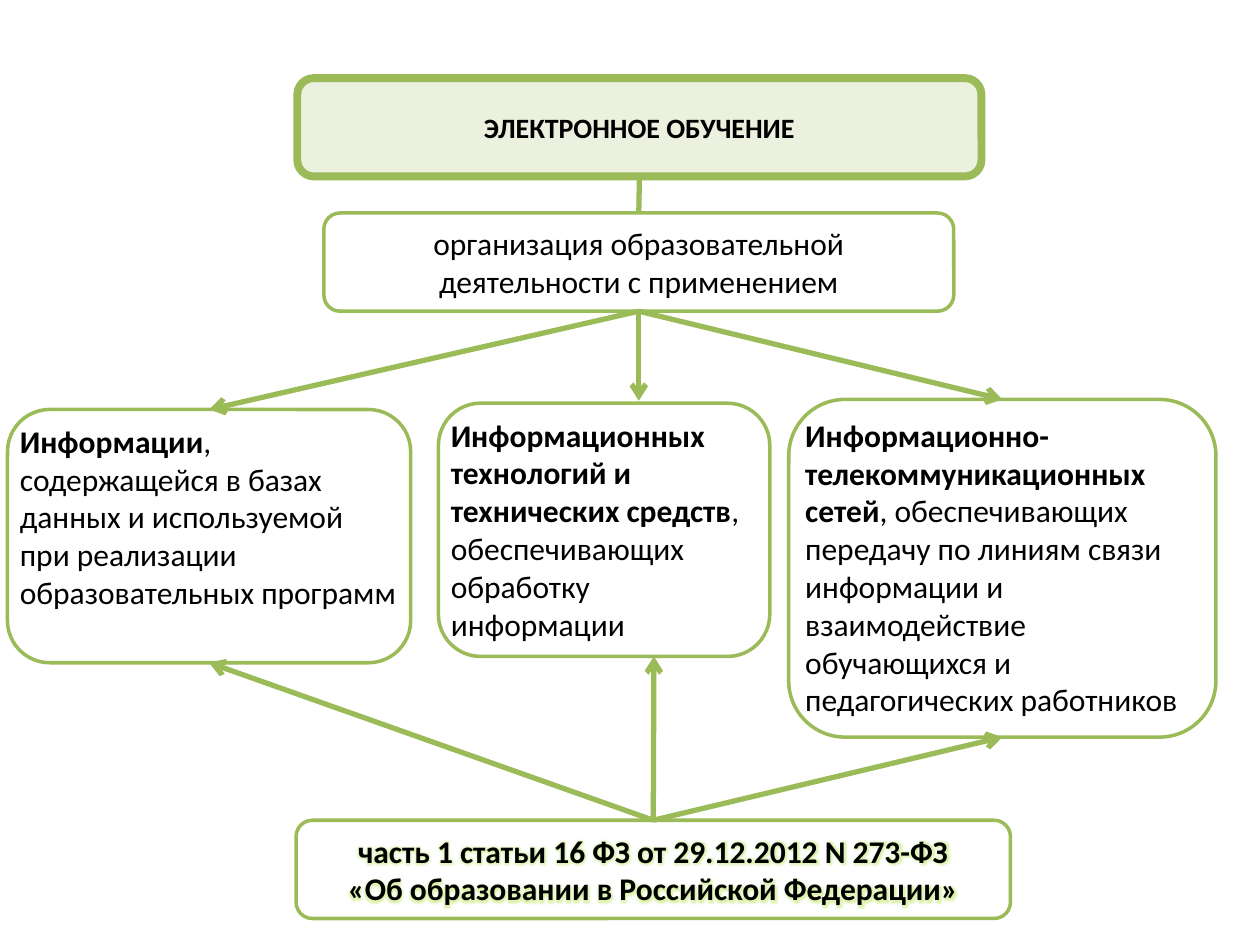
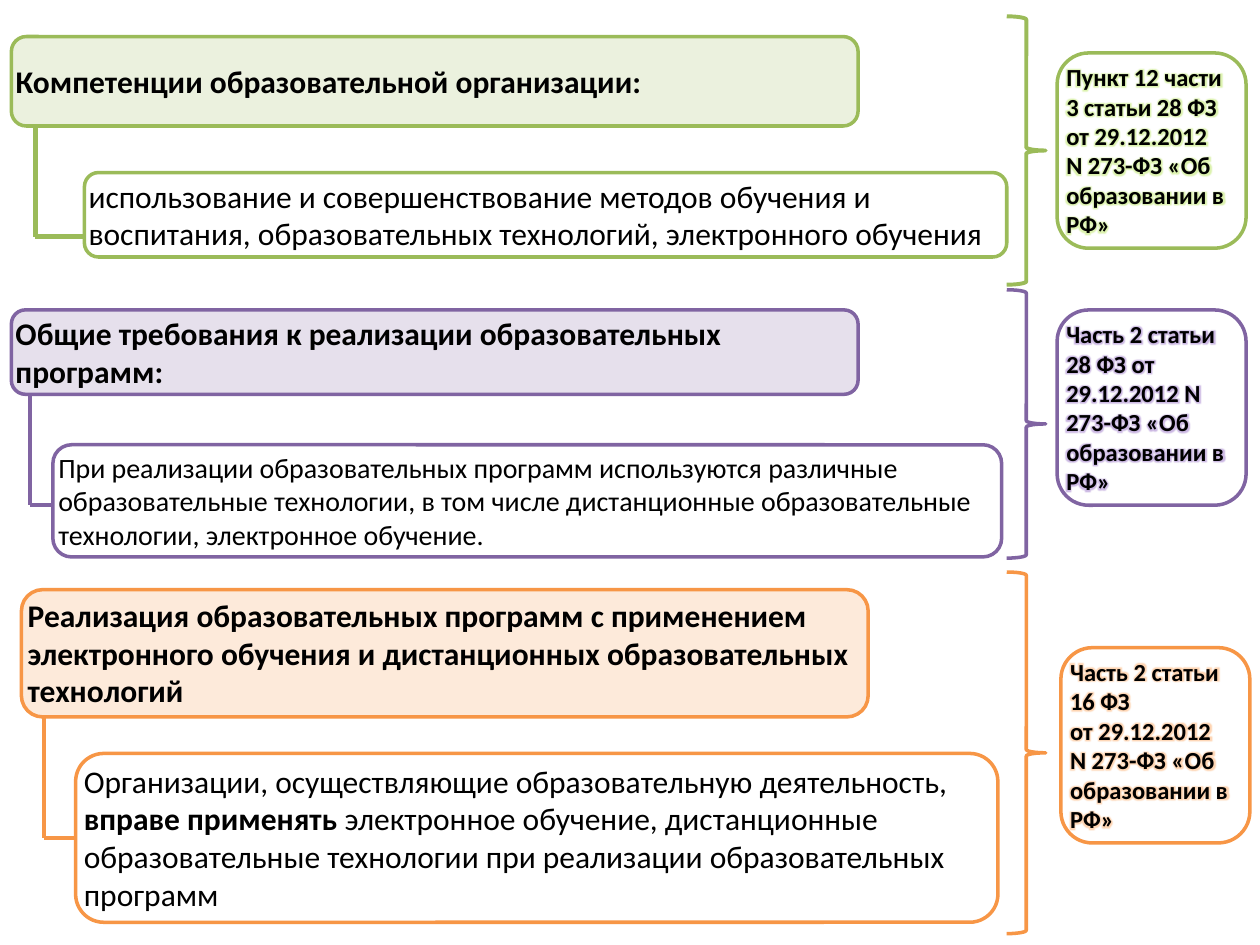
import dataclasses
import typing

import lxml.etree
import pptx
import pptx.dml.color
import pptx.enum.shapes
import pptx.enum.text
import pptx.oxml.ns
import pptx.util

Inches = pptx.util.Inches
Shape = pptx.enum.shapes.MSO_SHAPE
Align = pptx.enum.text.PP_ALIGN
Anchor = pptx.enum.text.MSO_ANCHOR
qn = pptx.oxml.ns.qn

FONT = "Calibri"
BLACK, WHITE = "000000", "FFFFFF"
GREEN, VIOLET, ORANGE = "9BBB59", "8064A2", "F79646"
PALE = {GREEN: "EBF1DE", VIOLET: "E6E0EC", ORANGE: "FDEADA"}

Point = tuple[float, float]
# A paragraph is a list of runs: text and whether it is bold
Para = list[tuple[str, bool]]


@dataclasses.dataclass
class Box:
    left: float
    top: float
    width: float
    height: float
    paras: list[Para]
    size: float = 18
    color: str = GREEN
    fill: str = WHITE
    line: float = 2
    pad: Point = (0, 0)
    align: typing.Any = Align.LEFT
    anchor: typing.Any = Anchor.TOP
    glow: bool = False

    @property
    def middle(self) -> float:
        return self.top + self.height / 2


@dataclasses.dataclass
class Group:
    """A heading, the text that hangs from it, a brace and the law cited."""
    head: Box
    body: Box
    law: Box
    stem: float          # x of the upright line
    bend: float          # y where the line turns to the body
    brace: Point         # top and height
    line: float = 2
    edge: float = 2


def rgb(code: str) -> pptx.dml.color.RGBColor:
    return pptx.dml.color.RGBColor.from_string(code)


def bold(*texts: str) -> list[Para]:
    return [[(text, True)] for text in texts]


def plain(*texts: str) -> list[Para]:
    return [[(text, False)] for text in texts]


def add_glow(font: typing.Any, color: str) -> None:
    """Put a soft halo of the given colour behind a run."""
    effect = lxml.etree.SubElement(font._element, qn("a:effectLst"))
    glow = lxml.etree.SubElement(effect, qn("a:glow"), rad="63500")
    tint = lxml.etree.SubElement(glow, qn("a:srgbClr"), val=color)
    lxml.etree.SubElement(tint, qn("a:satMod"), val="175000")
    lxml.etree.SubElement(tint, qn("a:alpha"), val="40000")


def draw_box(slide: typing.Any, box: Box) -> typing.Any:
    shape = slide.shapes.add_shape(
        Shape.ROUNDED_RECTANGLE, Inches(box.left), Inches(box.top),
        Inches(box.width), Inches(box.height))
    shape.shadow.inherit = False
    shape.fill.solid()
    shape.fill.fore_color.rgb = rgb(box.fill)
    shape.line.color.rgb = rgb(box.color)
    shape.line.width = pptx.util.Pt(box.line)

    frame = shape.text_frame
    frame.word_wrap = True
    frame.vertical_anchor = box.anchor
    frame.margin_left = frame.margin_right = Inches(box.pad[0])
    frame.margin_top = frame.margin_bottom = Inches(box.pad[1])
    for i, runs in enumerate(box.paras):
        para = frame.paragraphs[0] if i == 0 else frame.add_paragraph()
        para.alignment = box.align
        for text, heavy in runs:
            run = para.add_run()
            run.text = text
            run.font.size = pptx.util.Pt(box.size)
            run.font.bold = heavy
            run.font.color.rgb = rgb(BLACK)
            if box.glow:
                add_glow(run.font, box.color)
            run.font.name = FONT
    return shape


def draw_line(slide: typing.Any, start: Point, end: Point, color: str,
              width: float, arrow: bool = False) -> typing.Any:
    link = slide.shapes.add_connector(
        pptx.enum.shapes.MSO_CONNECTOR.STRAIGHT,
        *(Inches(value) for value in (*start, *end)))
    link.line.color.rgb = rgb(color)
    link.line.width = pptx.util.Pt(width)
    if arrow:
        lxml.etree.SubElement(link.line._get_or_add_ln(), qn("a:tailEnd"),
                              type="arrow")
    lxml.etree.SubElement(link._element.spPr, qn("a:effectLst"))
    return link


def draw_brace(slide: typing.Any, group: Group) -> None:
    top, height = group.brace
    brace = slide.shapes.add_shape(
        Shape.RIGHT_BRACE, Inches(7.99), Inches(top),
        Inches(0.31), Inches(height))
    brace.shadow.inherit = False
    brace.fill.background()
    brace.line.color.rgb = rgb(group.head.color)
    brace.line.width = pptx.util.Pt(group.edge)


def draw_group(slide: typing.Any, group: Group) -> None:
    head, body = group.head, group.body
    draw_box(slide, head)
    target = draw_box(slide, body)
    turn = (group.stem, group.bend)
    foot = (group.stem, head.top + head.height)
    draw_line(slide, foot, turn, head.color, group.line)
    link = draw_line(slide, turn, (body.left, group.bend), head.color,
                     group.line)
    if abs(group.bend - body.middle) < 0.01:
        link.end_connect(target, 1)
    draw_box(slide, group.law)
    draw_brace(slide, group)


def head_box(left: float, top: float, height: float, color: str,
             text: str) -> Box:
    return Box(left, top, 6.72, height, bold(text), color=color,
               fill=PALE[color])


def law_box(left: float, top: float, color: str, *texts: str) -> Box:
    return Box(left, top, 1.5, 1.55, bold(*texts), 14, color, glow=True)


# Scheme of e-learning
TITLE = Box(2.36, 0.62, 5.43, 0.78, bold("ЭЛЕКТРОННОЕ ОБУЧЕНИЕ"), 16,
            fill=PALE[GREEN], line=4.5, align=Align.CENTER,
            anchor=Anchor.MIDDLE)
BASIS = Box(2.57, 1.69, 5, 0.78,
            plain("организация образовательной деятельности с применением"),
            pad=(0.1, 0.05), align=Align.CENTER, anchor=Anchor.MIDDLE)
MEANS = [
    Box(0.06, 3.25, 3.2, 2.01, [
        [("Информации", True), (",", False)],
        [("содержащейся в базах данных и используемой при реализации "
          "образовательных программ", False)]]),
    Box(3.48, 3.2, 2.63, 2.01, [[
        ("Информационных технологий и технических средств", True),
        (", обеспечивающих обработку информации", False)]]),
    Box(6.26, 3.17, 3.39, 2.68, [[
        ("Информационно-телекоммуникационных сетей", True),
        (", обеспечивающих передачу по линиям связи информации и "
         "взаимодействие обучающихся и педагогических работников", False)]]),
]
SOURCE = Box(2.35, 6.51, 5.67, 0.78,
             bold("часть 1 статьи 16 ФЗ от 29.12.2012 N 273-ФЗ",
                  "«Об образовании в Российской Федерации»"),
             pad=(0.1, 0.05), align=Align.CENTER, anchor=Anchor.MIDDLE,
             glow=True)

# Rules of law, one group for each colour
GROUPS = [
    Group(
        dataclasses.replace(
            head_box(0.09, 0.29, 0.71, GREEN,
                     "Компетенции образовательной организации:"),
            anchor=Anchor.MIDDLE),
        Box(0.67, 1.37, 7.32, 0.67, plain(
            "использование и совершенствование методов обучения и "
            "воспитания, образовательных технологий, электронного обучения")),
        law_box(8.39, 0.42, GREEN,
                "Пункт 12 части 3 статьи 28 ФЗ от 29.12.2012",
                "N 273-ФЗ «Об образовании в РФ»"),
        stem=0.28, bend=1.88, brace=(0.13, 2.13), line=3, edge=2.25),
    Group(
        head_box(0.17, 4.68, 1.01, ORANGE,
                 "Реализация образовательных программ с применением "
                 "электронного обучения и дистанционных образовательных "
                 "технологий"),
        Box(0.6, 5.98, 7.32, 1.34, [[
            ("Организации, осуществляющие образовательную деятельность, ",
             False),
            ("вправе применять ", True),
            ("электронное обучение, дистанционные образовательные "
             "технологии при реализации образовательных программ", False)]],
            color=ORANGE),
        law_box(8.42, 5.14, ORANGE, "Часть 2 статьи 16 ФЗ", "от 29.12.2012",
                "N 273-ФЗ «Об образовании в РФ»"),
        stem=0.35, bend=6.65, brace=(4.54, 2.87)),
    Group(
        head_box(0.09, 2.46, 0.67, VIOLET,
                 "Общие требования к реализации образовательных программ:"),
        Box(0.42, 3.53, 7.53, 0.89, plain(
            "При реализации образовательных программ используются различные "
            "образовательные технологии, в том числе дистанционные "
            "образовательные технологии, электронное обучение."),
            16, VIOLET),
        law_box(8.39, 2.46, VIOLET,
                "Часть 2 статьи 28 ФЗ от 29.12.2012 N 273-ФЗ "
                "«Об образовании в РФ»"),
        stem=0.24, bend=4.01, brace=(2.3, 2.13)),
]


def draw_scheme(slide: typing.Any) -> None:
    title, basis, source = (draw_box(slide, box)
                            for box in (TITLE, BASIS, SOURCE))
    means = [draw_box(slide, box) for box in MEANS]
    link = draw_line(slide, (5.08, 1.4), (5.07, 1.69), GREEN, 3)
    link.begin_connect(title, 2)
    link.end_connect(basis, 0)

    # Arrows from above and below; the central ones run upright
    for hub, out, side, start, mid in (
            (basis, 2, 0, (5.07, 2.47), (5.07, 3.18)),
            (source, 0, 2, (5.19, 6.51), (5.19, 5.21))):
        for i, shape in enumerate(means):
            link = draw_line(slide, start, mid, GREEN, 3, arrow=True)
            link.begin_connect(hub, out)
            if i != 1:
                link.end_connect(shape, side)


def main() -> None:
    deck = pptx.Presentation()
    deck.slide_width, deck.slide_height = Inches(10), Inches(7.5)
    blank = deck.slide_layouts[6]
    draw_scheme(deck.slides.add_slide(blank))
    rules = deck.slides.add_slide(blank)
    for group in GROUPS:
        draw_group(rules, group)
    deck.save("out.pptx")


if __name__ == "__main__":
    main()
